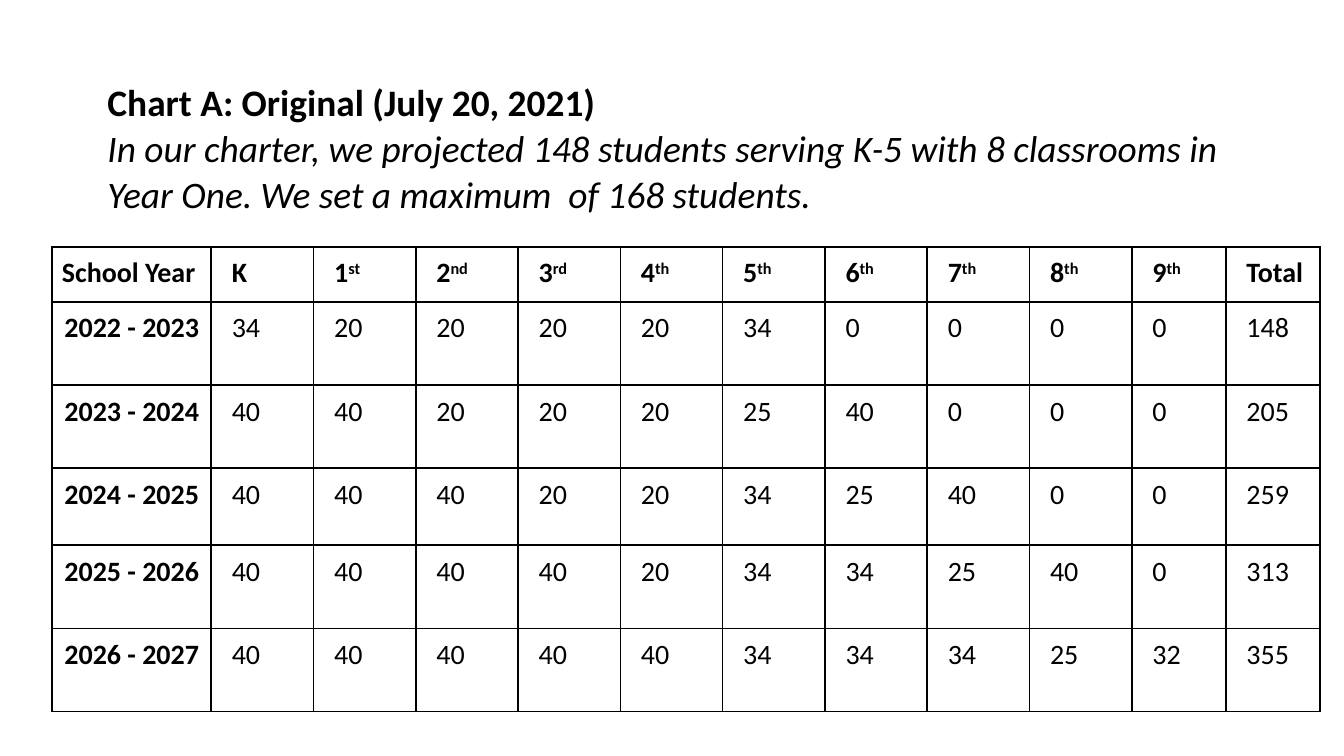
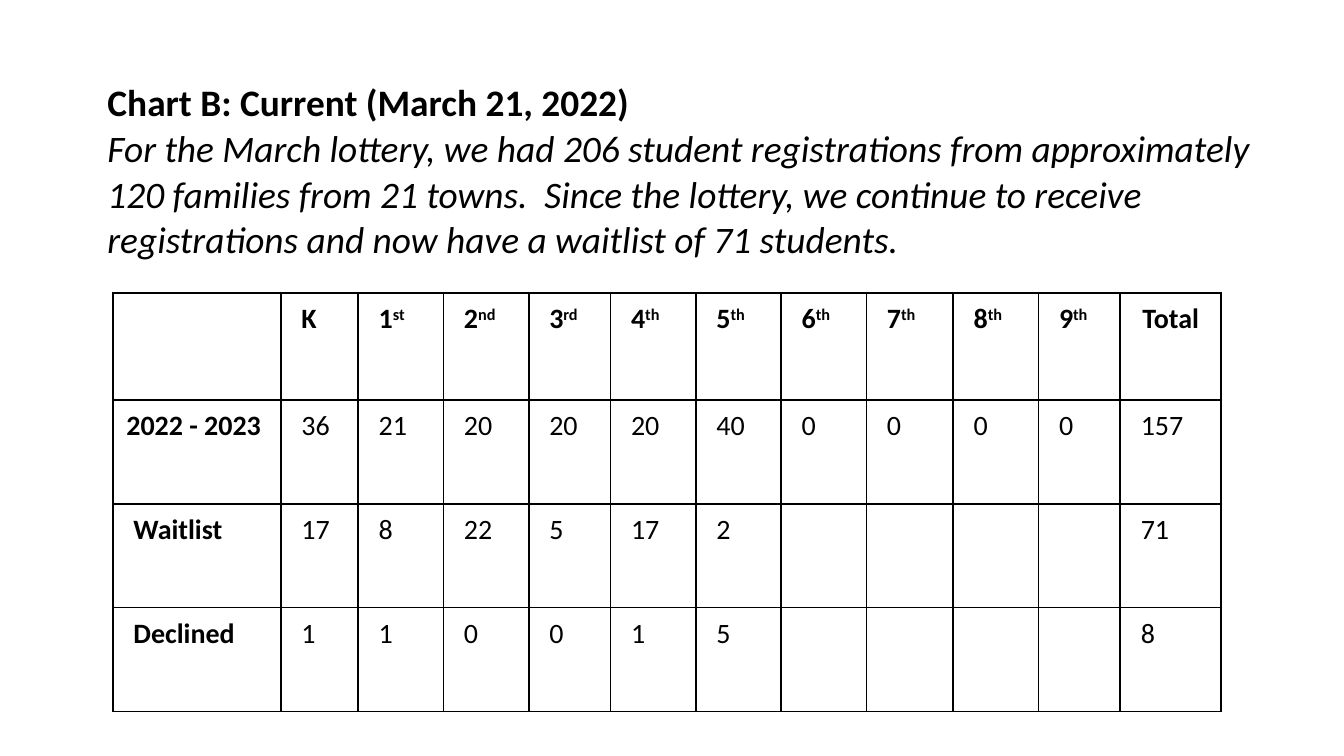
from dataclasses import dataclass
from lxml.etree import SubElement
from pptx import Presentation
from pptx.dml.color import RGBColor
from pptx.enum.text import MSO_ANCHOR, PP_ALIGN
from pptx.oxml import parse_xml
from pptx.oxml.ns import nsdecls, qn
from pptx.util import Pt


@dataclass(frozen=True)
class Theme:
    """Colours, type sizes and insets shared by the slides."""

    ink: str = "000000"
    family: str = "Calibri"
    heading_size: float = 20
    cell_size: float = 15
    border: float = 1
    heading_inset: float = 7.2
    heading_indent: float = 26
    cell_inset: float = 5
    cell_indent: float = 6


THEME = Theme()
GRADES = "K 1st 2nd 3rd 4th 5th 6th 7th 8th 9th Total".split()
SIDES = ("left", "right", "top", "bottom")

CHART_A = {
    "heading": "Chart A: Original (July 20, 2021)",
    "summary": "In our charter, we projected 148 students serving K-5 with 8 "
               "classrooms in Year One. We set a maximum  of 168 students.",
    "heading_box": (24.5, 35.3, 671, 84.2),
    "corner": "School Year ",
    "enrolment": [
        ("2022 - 2023 ", "34 20 20 20 20 34 0 0 0 0 148".split()),
        ("2023 - 2024 ", "40 40 20 20 20 25 40 0 0 0 205".split()),
        ("2024 - 2025", "40 40 40 20 20 34 25 40 0 0 259".split()),
        ("2025 - 2026 ", "40 40 40 40 20 34 34 25 40 0 313".split()),
        ("2026 - 2027 ", "40 40 40 40 40 34 34 34 25 32 355".split()),
    ],
    "origin": (28, 132.3),
    "widths": [85.2] + [54.8] * 9 + [50.4] * 2,
    "heights": [29.4, 44.6, 44.6, 41.2, 44.6, 44.6],
    "centred": {"School Year "},
}
UNUSED = [""] * 4
CHART_B = {
    "heading": "Chart B: Current (March 21, 2022)",
    "summary": "For the March lottery, we had 206 student registrations from "
               "approximately 120 families from 21 towns.  Since the lottery, we "
               "continue to receive registrations and now have a waitlist of 71 students.",
    "heading_box": (24.5, 35.3, 671, 120.2),
    "corner": "",
    "enrolment": [
        ("2022 - 2023 ", "36 21 20 20 20 40 0 0 0 0 157".split()),
        ("Waitlist", ["17", "8", "22", "5", "17", "2", *UNUSED, "71"]),
        ("Declined", ["1", "1", "0", "0", "1", "5", *UNUSED, "8"]),
    ],
    "origin": (60.5, 156.8),
    "widths": [90, 41.4, 45.7, 45.7, 43.8, 45.7, 45.7, 45.7, 46.5, 45.7, 43.8, 54],
    "heights": [57.4] + [55.7] * 3,
    "centred": {"Total"},
}


def apply(target, formats):
    """Set every attribute named in a dict of format values."""
    for name, value in formats.items():
        setattr(target, name, value)


def insets(amount):
    """Return equal margins for all four sides."""
    return {f"margin_{side}": Pt(amount) for side in SIDES}


def write(paragraph, wording, size, bold=False, italic=False, raised=False):
    """Add one run in the theme's type."""
    run = paragraph.add_run()
    run.text = wording
    apply(run.font, {"name": THEME.family, "size": Pt(size), "bold": bold, "italic": italic})
    apply(run.font.color, {"rgb": RGBColor.from_string(THEME.ink)})
    if raised:
        run._r.get_or_add_rPr().set("baseline", "30000")


def indent(paragraph, amount):
    """Give a paragraph a left indent."""
    properties = paragraph._p.get_or_add_pPr()
    properties.set("marL", str(Pt(amount)))
    properties.set("indent", "0")


def outline(cell):
    """Draw the four borders of a cell and leave it unfilled."""
    cell.fill.background()
    properties = cell._tc.get_or_add_tcPr()
    for position, side in enumerate("LRTB"):
        edge = parse_xml(f'<a:ln{side} {nsdecls("a")} w="{Pt(THEME.border)}"/>')
        ink = SubElement(SubElement(edge, qn("a:solidFill")), qn("a:srgbClr"))
        ink.set("val", THEME.ink)
        properties.insert(position, edge)


def place_heading(slide, chart):
    """Place the bold heading and its italic summary in the heading box."""
    frame = slide.shapes.add_textbox(*map(Pt, chart["heading_box"])).text_frame
    apply(frame, {"word_wrap": True, "vertical_anchor": MSO_ANCHOR.TOP,
                  **insets(THEME.heading_inset)})
    heading, summary = frame.paragraphs[0], frame.add_paragraph()
    write(heading, chart["heading"], THEME.heading_size, bold=True)
    write(summary, chart["summary"], THEME.heading_size, italic=True)
    apply(summary, {"line_spacing": 1.01, "space_before": Pt(0.6)})
    for paragraph in (heading, summary):
        indent(paragraph, THEME.heading_indent)


def fill_cell(cell, wording, centred, bold, ordinal):
    """Write one table cell, raising the ending of an ordinal."""
    apply(cell, insets(THEME.cell_inset))
    outline(cell)
    if not wording:
        return
    paragraph = cell.text_frame.paragraphs[0]
    if centred:
        apply(paragraph, {"alignment": PP_ALIGN.CENTER})
    else:
        indent(paragraph, THEME.cell_indent)
    if ordinal:
        write(paragraph, wording[0], THEME.cell_size, bold)
        write(paragraph, wording[1:], THEME.cell_size, bold, raised=True)
    else:
        write(paragraph, wording, THEME.cell_size, bold)


def place_enrolment(slide, chart):
    """Place the enrolment table at its origin."""
    rows = [(chart["corner"], GRADES), *chart["enrolment"]]
    widths, heights = chart["widths"], chart["heights"]
    bounds = (*chart["origin"], sum(widths), sum(heights))
    table = slide.shapes.add_table(len(rows), len(widths), *map(Pt, bounds)).table
    apply(table, {"first_row": False, "horz_banding": False})
    for column, width in zip(table.columns, widths):
        apply(column, {"width": Pt(width)})
    for row, height in zip(table.rows, heights):
        apply(row, {"height": Pt(height)})
    for r, (label, counts) in enumerate(rows):
        for c, wording in enumerate([label, *counts]):
            is_year = c == 0 and wording.startswith("20")
            fill_cell(table.cell(r, c), wording,
                      centred=is_year or wording in chart["centred"],
                      bold=r == 0 or c == 0,
                      ordinal=r == 0 and wording[:1].isdigit())


def main():
    """Build both enrolment slides and save them."""
    deck = Presentation()
    apply(deck, {"slide_width": Pt(720), "slide_height": Pt(405)})
    for chart in (CHART_A, CHART_B):
        slide = deck.slides.add_slide(deck.slide_layouts[6])
        place_heading(slide, chart)
        place_enrolment(slide, chart)
    deck.save("out.pptx")


if __name__ == "__main__":
    main()
